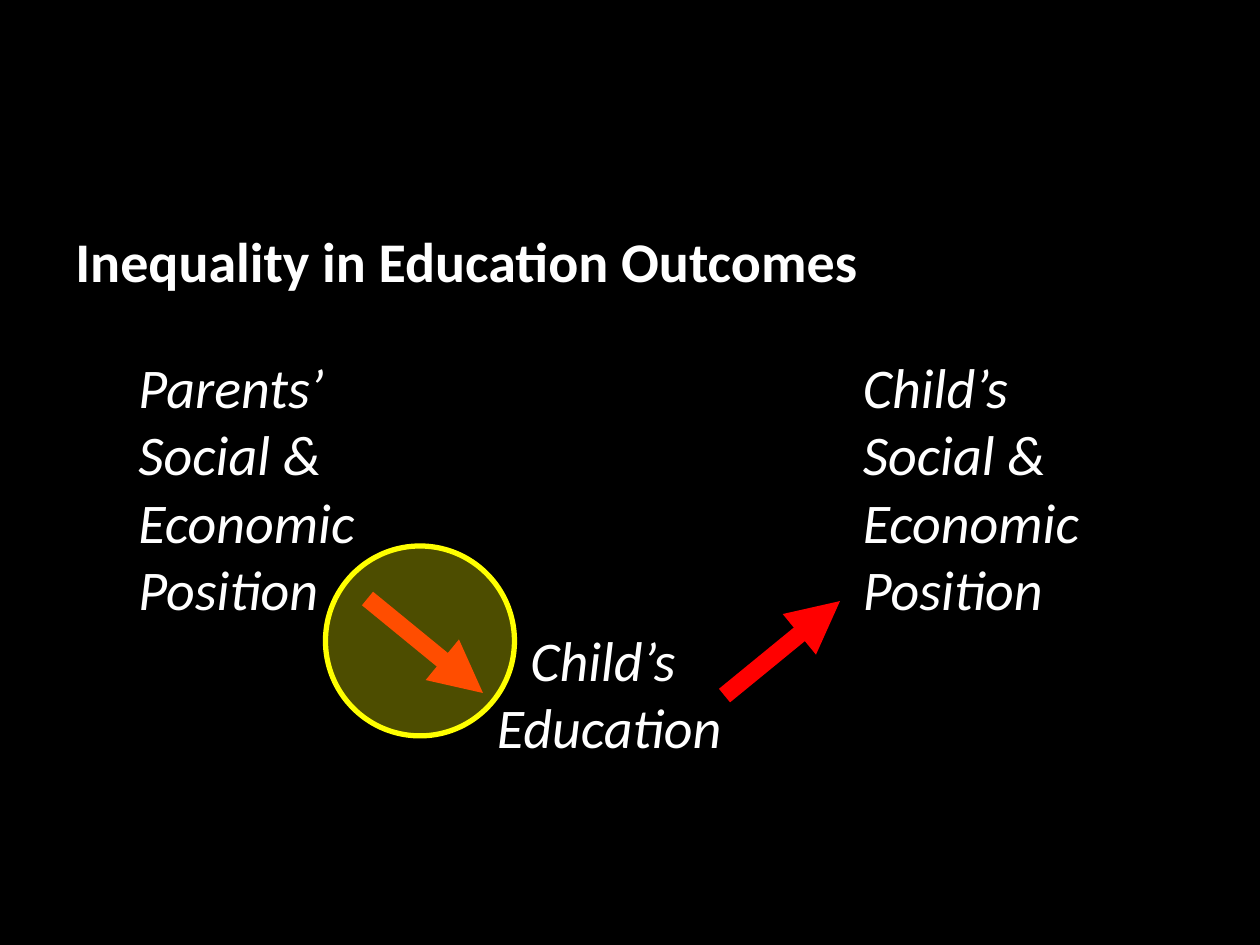
from dataclasses import dataclass

from lxml import etree
from pptx import Presentation
from pptx.dml import color
from pptx.enum import shapes, text
from pptx.oxml import ns
from pptx.slide import Slide
from pptx.util import Pt

BLACK = color.RGBColor(0x00, 0x00, 0x00)
WHITE = color.RGBColor(0xFF, 0xFF, 0xFF)
RED = color.RGBColor(0xFF, 0x00, 0x00)
YELLOW = color.RGBColor(0xFF, 0xFF, 0x00)
FONT = "Calibri"
FONT_SIZE = 32


@dataclass(frozen=True)
class Label:
    lines: tuple[str, ...]
    left: float
    top: float
    width: float
    height: float
    alignment: text.PP_ALIGN = text.PP_ALIGN.LEFT


@dataclass(frozen=True)
class Arrow:
    start: tuple[float, float]
    end: tuple[float, float]


POSITION_LINES = ("Social &", "Economic", "Position")
LABELS = (
    Label(("Parents’", *POSITION_LINES), 72, 198, 148.3, 162.7),
    Label(("Child’s", *POSITION_LINES), 486, 198, 148.3, 162.7),
    Label(("Child’s ", "Education"), 275.8, 354, 144.7, 85,
          text.PP_ALIGN.CENTER),
)
ARROWS = (
    Arrow((210, 342), (276, 396)),
    Arrow((414, 397.5), (480, 343.5)),
)


def add_label(slide: Slide, label: Label, *, bold: bool = False,
              italic: bool = False, wrap: bool = False) -> None:
    box = slide.shapes.add_textbox(
        Pt(label.left), Pt(label.top), Pt(label.width), Pt(label.height))
    frame = box.text_frame
    frame.word_wrap = wrap
    frame.text = "\n".join(label.lines)
    for paragraph in frame.paragraphs:
        paragraph.alignment = label.alignment
        for run in paragraph.runs:
            run.font.name = FONT
            run.font.size = Pt(FONT_SIZE)
            run.font.bold = bold
            run.font.italic = italic
            run.font.color.rgb = WHITE


def add_arrow(slide: Slide, arrow: Arrow) -> None:
    connector = slide.shapes.add_connector(
        shapes.MSO_CONNECTOR.STRAIGHT,
        *(Pt(value) for value in (*arrow.start, *arrow.end)))
    connector.line.color.rgb = RED
    connector.line.width = Pt(10)
    outline = connector.line._get_or_add_ln()
    etree.SubElement(outline, ns.qn("a:tailEnd"), type="triangle")
    etree.SubElement(connector._element.spPr, ns.qn("a:effectLst"))


def add_highlight(slide: Slide) -> None:
    circle = slide.shapes.add_shape(
        shapes.MSO_SHAPE.OVAL, Pt(186), Pt(312), Pt(108), Pt(108.5))
    circle.shadow.inherit = False
    circle.fill.solid()
    circle.fill.fore_color.rgb = YELLOW
    fill_color = circle._element.spPr.find(
        f"{ns.qn('a:solidFill')}/{ns.qn('a:srgbClr')}")
    etree.SubElement(fill_color, ns.qn("a:alpha"), val="30000")
    circle.line.color.rgb = YELLOW
    circle.line.width = Pt(3)


def main() -> None:
    presentation = Presentation()
    presentation.slide_width = Pt(720)
    presentation.slide_height = Pt(540)
    slide = presentation.slides.add_slide(presentation.slide_layouts[6])
    slide.background.fill.solid()
    slide.background.fill.fore_color.rgb = BLACK

    title = Label(("Inequality in Education Outcomes",), 36, 126, 648, 356.4)
    add_label(slide, title, bold=True, wrap=True)
    for label in LABELS:
        add_label(slide, label, italic=True)
    for arrow in ARROWS:
        add_arrow(slide, arrow)
    add_highlight(slide)
    presentation.save("out.pptx")


if __name__ == "__main__":
    main()
